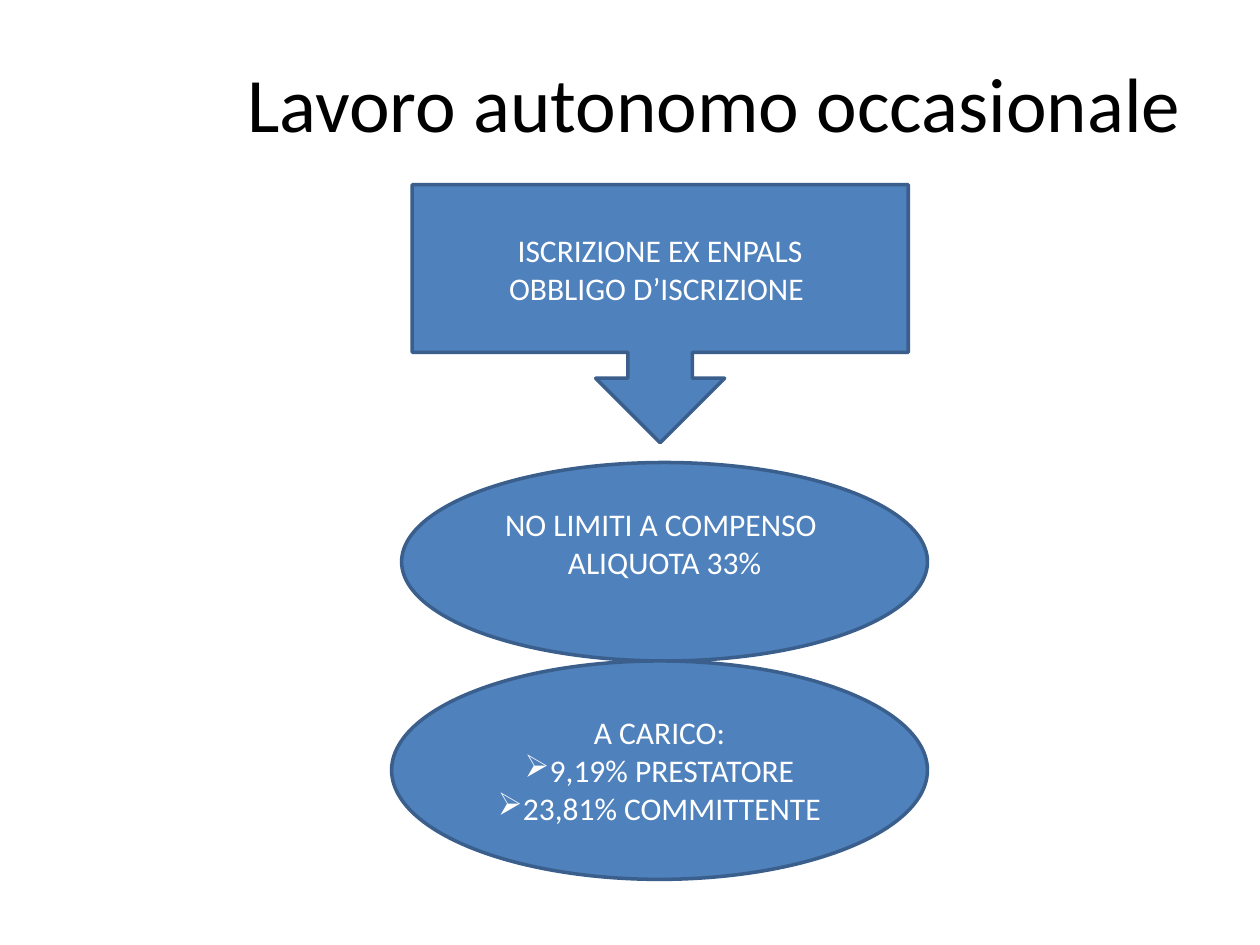
from dataclasses import dataclass

from lxml.etree import SubElement
from pptx import Presentation
from pptx.dml.color import RGBColor
from pptx.enum.shapes import MSO_SHAPE
from pptx.enum.text import MSO_ANCHOR, PP_ALIGN
from pptx.oxml.ns import qn
from pptx.slide import Slide
from pptx.util import Pt


@dataclass(frozen=True)
class Theme:
    font: str = "Calibri"
    head: int = 44
    body: int = 18
    edge: int = 2
    ink: RGBColor = RGBColor(0, 0, 0)
    fill: RGBColor = RGBColor(0x4F, 0x81, 0xBD)
    line: RGBColor = RGBColor(0x3A, 0x5F, 0x8C)
    text: RGBColor = RGBColor(0xFF, 0xFF, 0xFF)


@dataclass(frozen=True)
class Step:
    kind: MSO_SHAPE
    box: tuple[float, float, float, float]
    lines: tuple[str, ...]
    points: tuple[str, ...] = ()
    base: float = 3.6  # bottom inset


THEME = Theme()
TITLE = "Lavoro autonomo occasionale"
STEPS = (
    Step(MSO_SHAPE.DOWN_ARROW_CALLOUT, (235.5, 105.6, 283.5, 147.4),
         ("ISCRIZIONE EX ENPALS", "OBBLIGO D’ISCRIZIONE ")),
    Step(MSO_SHAPE.OVAL, (229.5, 264.3, 300.5, 113.4),
         ("NO LIMITI A COMPENSO ", "ALIQUOTA 33%"), base=25.2),
    Step(MSO_SHAPE.OVAL, (223.8, 377.7, 306.2, 124.8),
         ("A CARICO:",), ("9,19% PRESTATORE", "23,81% COMMITTENTE")),
)


def style(para, size: int, color: RGBColor) -> None:
    para.alignment = PP_ALIGN.CENTER
    para.font.name = THEME.font
    para.font.size = Pt(size)
    para.font.color.rgb = color


def mark(para) -> None:
    """Put an arrow bullet directly before the centred text."""
    props = para._p.get_or_add_pPr()
    props.set("marL", "0")
    props.set("indent", "0")
    bullet = SubElement(props, qn("a:buChar"))
    bullet.set("char", "➢")
    # The schema wants bullets ahead of the default run properties.
    props.find(qn("a:defRPr")).addprevious(bullet)


def add_title(slide: Slide) -> None:
    title = slide.shapes.title
    title.left, title.top = Pt(113), Pt(21.6)
    title.width, title.height = Pt(590.4), Pt(72.7)
    title.text_frame.text = TITLE
    title.text_frame.vertical_anchor = MSO_ANCHOR.MIDDLE
    style(title.text_frame.paragraphs[0], THEME.head, THEME.ink)


def add_step(slide: Slide, step: Step) -> None:
    shape = slide.shapes.add_shape(step.kind, *map(Pt, step.box))
    shape.shadow.inherit = False
    shape.fill.solid()
    shape.fill.fore_color.rgb = THEME.fill
    shape.line.color.rgb = THEME.line
    shape.line.width = Pt(THEME.edge)
    frame = shape.text_frame
    frame.word_wrap = True
    frame.vertical_anchor = MSO_ANCHOR.MIDDLE
    frame.margin_bottom = Pt(step.base)
    frame.text = "\n".join(step.lines + step.points)
    for i, para in enumerate(frame.paragraphs):
        style(para, THEME.body, THEME.text)
        if i >= len(step.lines):
            mark(para)


def main() -> None:
    deck = Presentation()
    deck.slide_width, deck.slide_height = Pt(720), Pt(540)
    slide = deck.slides.add_slide(deck.slide_layouts[5])
    add_title(slide)
    for step in STEPS:
        add_step(slide, step)
    deck.save("out.pptx")


if __name__ == "__main__":
    main()
